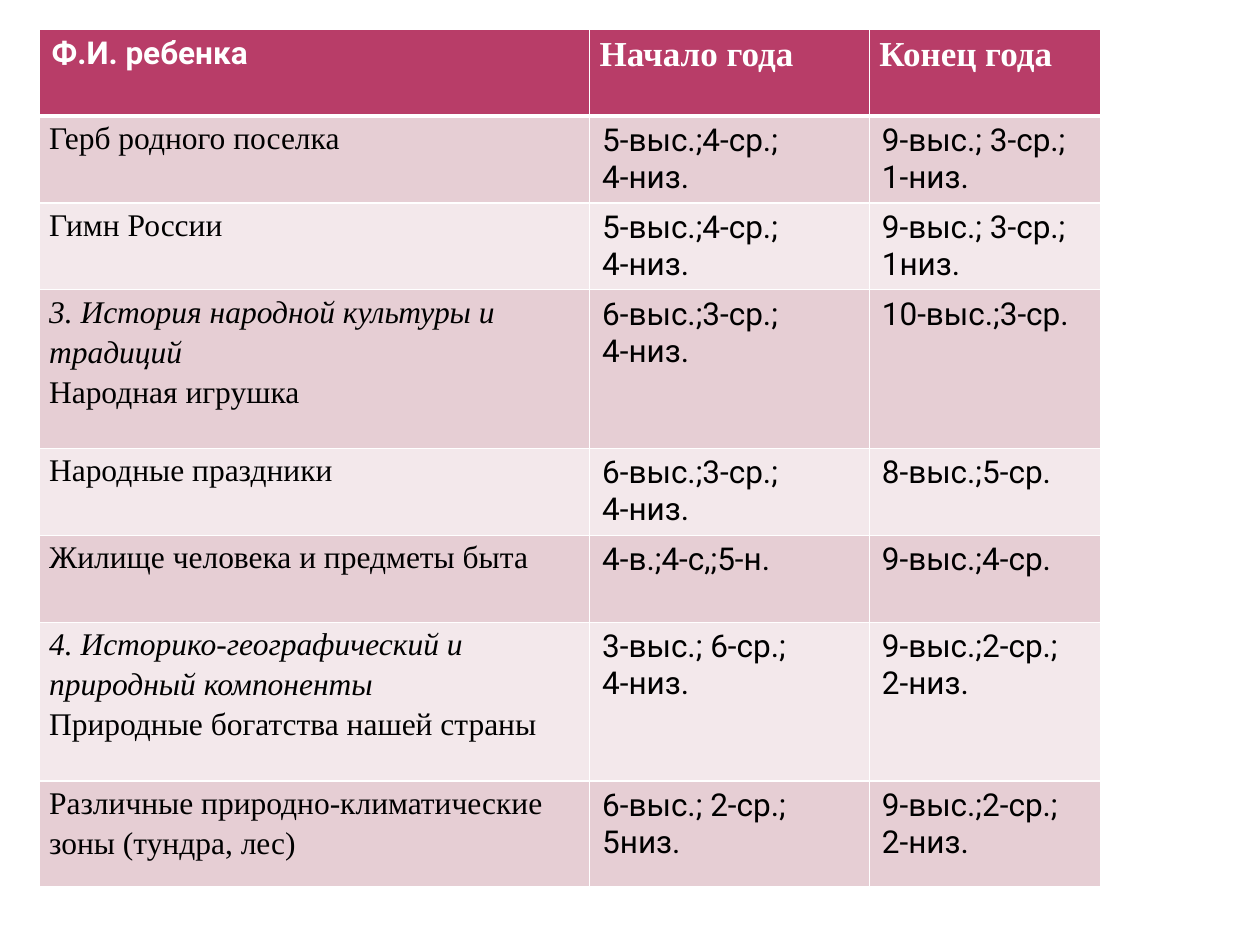
"""Build the slide with the start and end of year results table."""
import pptx
import pptx.dml.color
import pptx.util
from lxml import etree
from pptx.util import Inches, Pt

COLORS = {"header": "B83D68", "odd": "E6CED4", "even": "F3E8EB",
          "white": "FFFFFF", "black": "000000"}
ROMAN_CELL = {"margin_left": Inches(0.08), "margin_right": Inches(0.08),
              "margin_top": 0, "margin_bottom": 0}
ROMAN_PARAGRAPH = {"line_spacing": 1.15, "space_after": Pt(7.5)}
DRAWING_NS = "http://schemas.openxmlformats.org/drawingml/2006/main"

results = [
    ("Ф.И. ребенка", "Начало года", "Конец года"),
    ("Герб родного поселка", "5-выс.;4-ср.;\n4-низ.", "9-выс.; 3-ср.;\n1-низ."),
    ("Гимн России", "5-выс.;4-ср.;\n4-низ.", "9-выс.; 3-ср.;\n1низ."),
    ("3. История народной культуры и традиций\nНародная игрушка",
     "6-выс.;3-ср.;\n4-низ.", "10-выс.;3-ср."),
    ("Народные праздники", "6-выс.;3-ср.;\n4-низ.", "8-выс.;5-ср."),
    ("Жилище человека и предметы быта", "4-в.;4-с,;5-н.", "9-выс.;4-ср."),
    ("4. Историко-географический и природный компоненты\nПриродные богатства нашей страны",
     "3-выс.; 6-ср.;\n4-низ.", "9-выс.;2-ср.;\n2-низ."),
    ("Различные природно-климатические зоны (тундра, лес)",
     "6-выс.; 2-ср.;\n5низ.", "9-выс.;2-ср.;\n2-низ."),
]
column_widths = [4.37, 2.22, 1.84]
row_heights = [0.69, 0.69, 0.69, 1.26, 0.69, 0.69, 1.26, 0.84]


def apply_format(target, values):
    for name, value in values.items():
        setattr(target, name, value)


def add_borders(cell, widths):
    properties = cell._tc.get_or_add_tcPr()
    for position, (side, width) in enumerate(widths.items()):
        line = etree.Element(f"{{{DRAWING_NS}}}ln{side}", w=str(Pt(width)))
        fill = etree.SubElement(line, f"{{{DRAWING_NS}}}solidFill")
        etree.SubElement(fill, f"{{{DRAWING_NS}}}srgbClr", val=COLORS["white"])
        properties.insert(position, line)


presentation = pptx.Presentation()
presentation.slide_width, presentation.slide_height = Inches(10), Inches(7.5)
slide = presentation.slides.add_slide(presentation.slide_layouts[6])
table = slide.shapes.add_table(
    len(results), len(column_widths), Inches(0.31), Inches(0.23),
    Inches(sum(column_widths)), Inches(sum(row_heights))).table
for column, width in zip(table.columns, column_widths):
    column.width = Inches(width)
for row, height in zip(table.rows, row_heights):
    row.height = Inches(height)

for row_index, entries in enumerate(results):
    is_header = row_index == 0
    shade = "header" if is_header else "odd" if row_index % 2 else "even"
    for column_index, entry in enumerate(entries):
        cell = table.cell(row_index, column_index)
        is_roman = is_header != (column_index == 0)
        cell.fill.solid()
        cell.fill.fore_color.rgb = pptx.dml.color.RGBColor.from_string(COLORS[shade])
        add_borders(cell, {"L": 1, "R": 1, "T": 3 if row_index == 1 else 1,
                           "B": 3 if is_header else 1})
        lines = entry.split("\n")
        paragraph = cell.text_frame.paragraphs[0]
        if is_roman:
            apply_format(cell, ROMAN_CELL)
            apply_format(paragraph, ROMAN_PARAGRAPH)
        for line_index, text in enumerate(lines):
            if line_index and is_roman:
                paragraph.add_line_break()
            elif line_index:
                paragraph = cell.text_frame.add_paragraph()
            run = paragraph.add_run()
            run.text = text
            apply_format(run.font, {
                "name": "Times New Roman" if is_roman else "Roboto",
                "size": Pt(20 if is_header and is_roman else 18),
                "bold": is_header,
                "italic": is_roman and line_index < len(lines) - 1})
            run.font.color.rgb = pptx.dml.color.RGBColor.from_string(
                COLORS["white" if is_header else "black"])

presentation.save("out.pptx")
